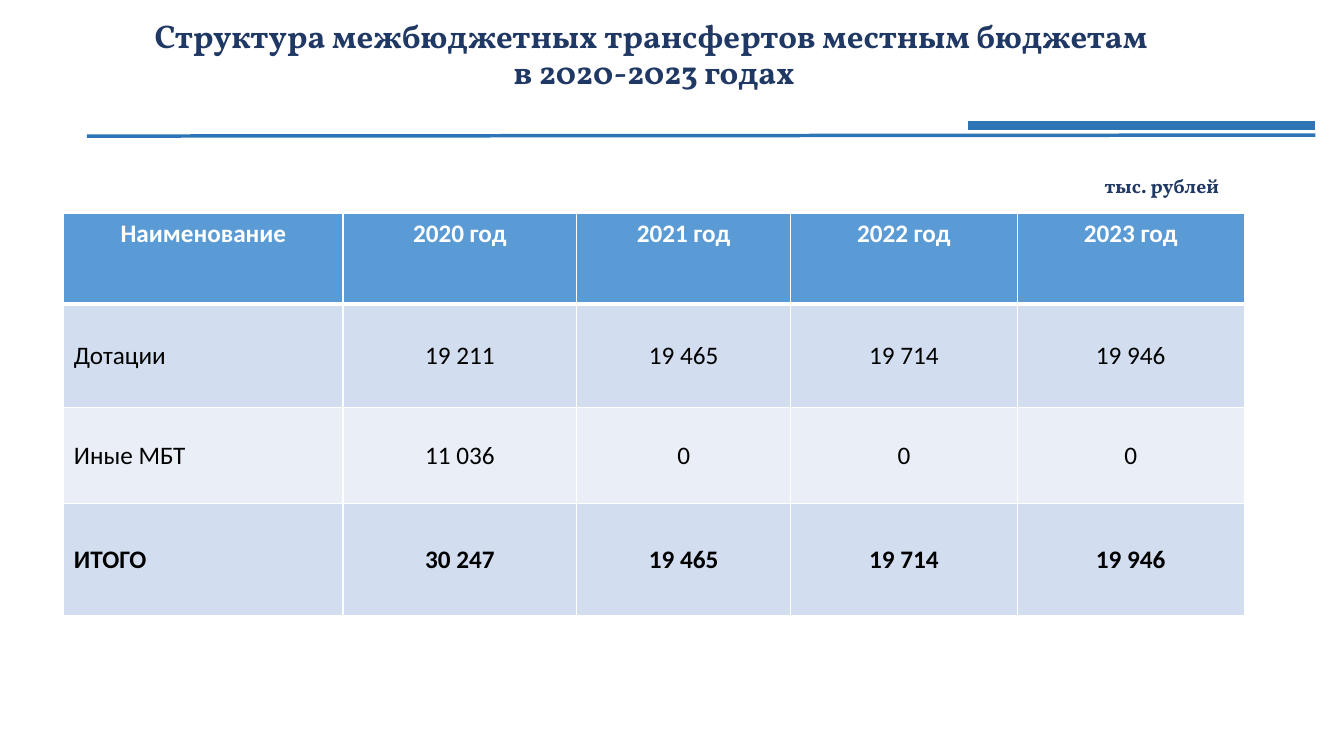
from pptx import Presentation
from pptx.dml.color import RGBColor
from pptx.enum.shapes import MSO_CONNECTOR
from pptx.enum.text import MSO_ANCHOR, MSO_AUTO_SIZE, PP_ALIGN
from pptx.util import Pt
from lxml import etree

COLORS = {"navy": "203864", "rule": "2E75B6", "head": "5B9BD5", "band": "D2DEEF",
          "light": "EAEFF7", "white": "FFFFFF", "black": "000000"}
A = "{http://schemas.openxmlformats.org/drawingml/2006/main}"


def rgb(name):
    return RGBColor.from_string(COLORS[name])


def write(tf, text, color, align, **font):
    p = tf.paragraphs[0]
    p.text, p.alignment = text, align
    for r in p.runs:
        r.font.color.rgb = rgb(color)
        for key, value in font.items():
            setattr(r.font, key, value)
    return p


prs = Presentation()
prs.slide_width, prs.slide_height = Pt(960), Pt(540)
s = prs.slides.add_slide(prs.slide_layouts[5])

# Title
title = s.shapes.title
title.left, title.top, title.width, title.height = Pt(38.2), Pt(3.6), Pt(858.2), Pt(87.1)
tf = title.text_frame
for key, value in {"word_wrap": True, "auto_size": MSO_AUTO_SIZE.NONE,
                   "vertical_anchor": MSO_ANCHOR.MIDDLE, "margin_bottom": Pt(18)}.items():
    setattr(tf, key, value)
p = write(tf, "Структура межбюджетных трансфертов местным бюджетам \vв 2020-2023 годах", "navy",
          PP_ALIGN.CENTER, name="Vollkorn", size=Pt(23.4), bold=True)
p.line_spacing = 0.9

# Unit label
label = s.shapes.add_textbox(Pt(782), Pt(121), Pt(117.4), Pt(24.5))
label.text_frame.word_wrap = True
write(label.text_frame, "тыс. рублей", "navy", PP_ALIGN.LEFT,
      name="Vollkorn", size=Pt(14), bold=True)

# Rules under the title
for x1, y1, x2, y2, weight in [(62, 97.2, 939.6, 96.5, 2.5), (691.2, 89.6, 939.6, 89.6, 6)]:
    rule = s.shapes.add_connector(MSO_CONNECTOR.STRAIGHT, Pt(x1), Pt(y1), Pt(x2), Pt(y2))
    rule.line.color.rgb = rgb("rule")
    rule.line.width = Pt(weight)
    etree.SubElement(rule.line._get_or_add_ln().getparent(), A + "effectLst")

# Transfers table
rows = [
    ("Наименование", "2020 год", "2021 год", "2022 год", "2023 год"),
    ("Дотации", "19 211", "19 465", "19 714", "19 946"),
    ("Иные МБТ", "11 036", "0", "0", "0"),
    ("ИТОГО", "30 247", "19 465", "19 714", "19 946"),
]
widths = [199.4, 167, 152.7, 162, 162]
heights = [64.6, 74, 68.6, 80]
fills = ["head", "band", "light", "band"]
table = s.shapes.add_table(len(rows), len(widths), Pt(45.6), Pt(152.7),
                           Pt(sum(widths)), Pt(sum(heights))).table
for column, width in zip(table.columns, widths):
    column.width = Pt(width)

for i, (row, height, fill) in enumerate(zip(rows, heights, fills)):
    table.rows[i].height = Pt(height)
    header = i == 0
    for j, text in enumerate(row):
        cell = table.cell(i, j)
        cell.vertical_anchor = MSO_ANCHOR.TOP if header else MSO_ANCHOR.MIDDLE
        write(cell.text_frame, text, "white" if header else "black",
              PP_ALIGN.CENTER if header or j else PP_ALIGN.LEFT,
              name="Calibri", size=Pt(18), bold=header or i == len(rows) - 1)
        cell.fill.solid()
        cell.fill.fore_color.rgb = rgb(fill)
        # White borders, thicker between header and body
        edges = {"lnL": 1, "lnR": 1, "lnT": 3 if i == 1 else 1, "lnB": 3 if header else 1}
        tcPr = cell._tc.get_or_add_tcPr()
        for k, (edge, weight) in enumerate(edges.items()):
            ln = etree.Element(A + edge, w=str(Pt(weight)))
            solid = etree.SubElement(ln, A + "solidFill")
            etree.SubElement(solid, A + "srgbClr", val=COLORS["white"])
            tcPr.insert(k, ln)

prs.save("out.pptx")
